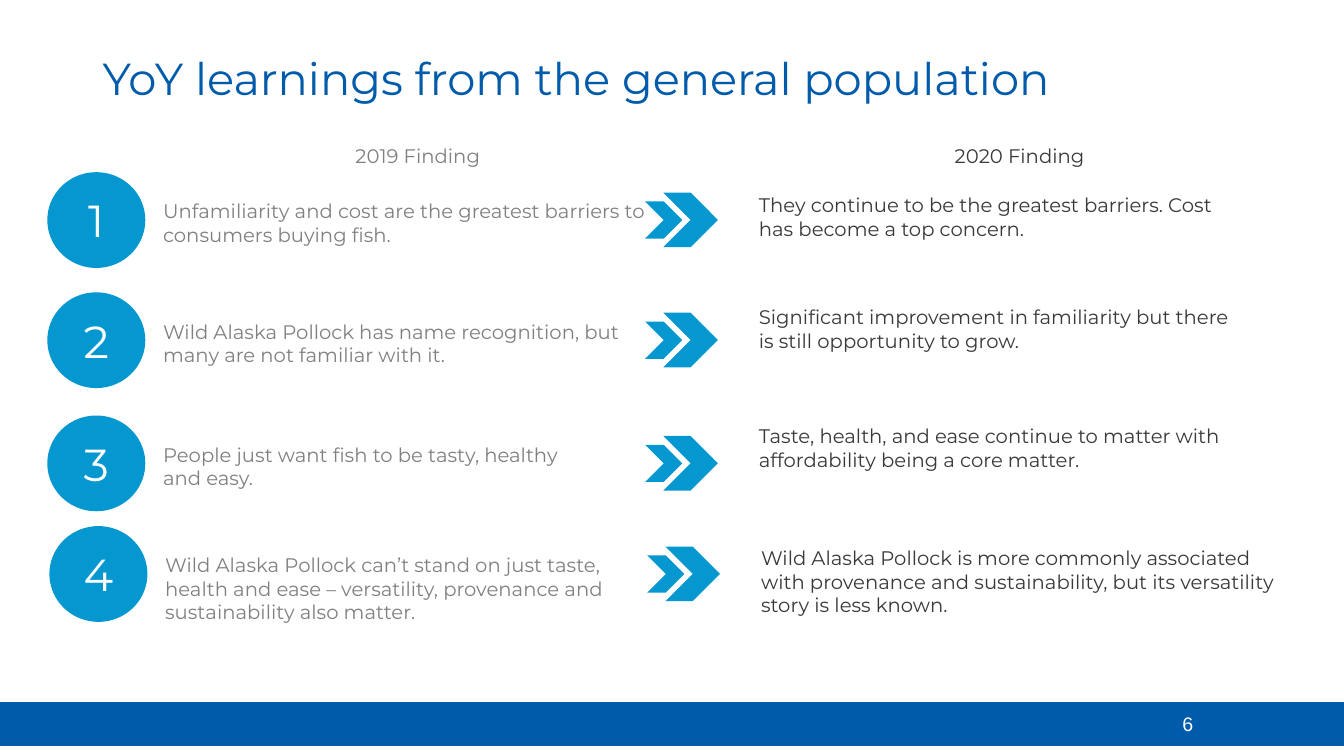
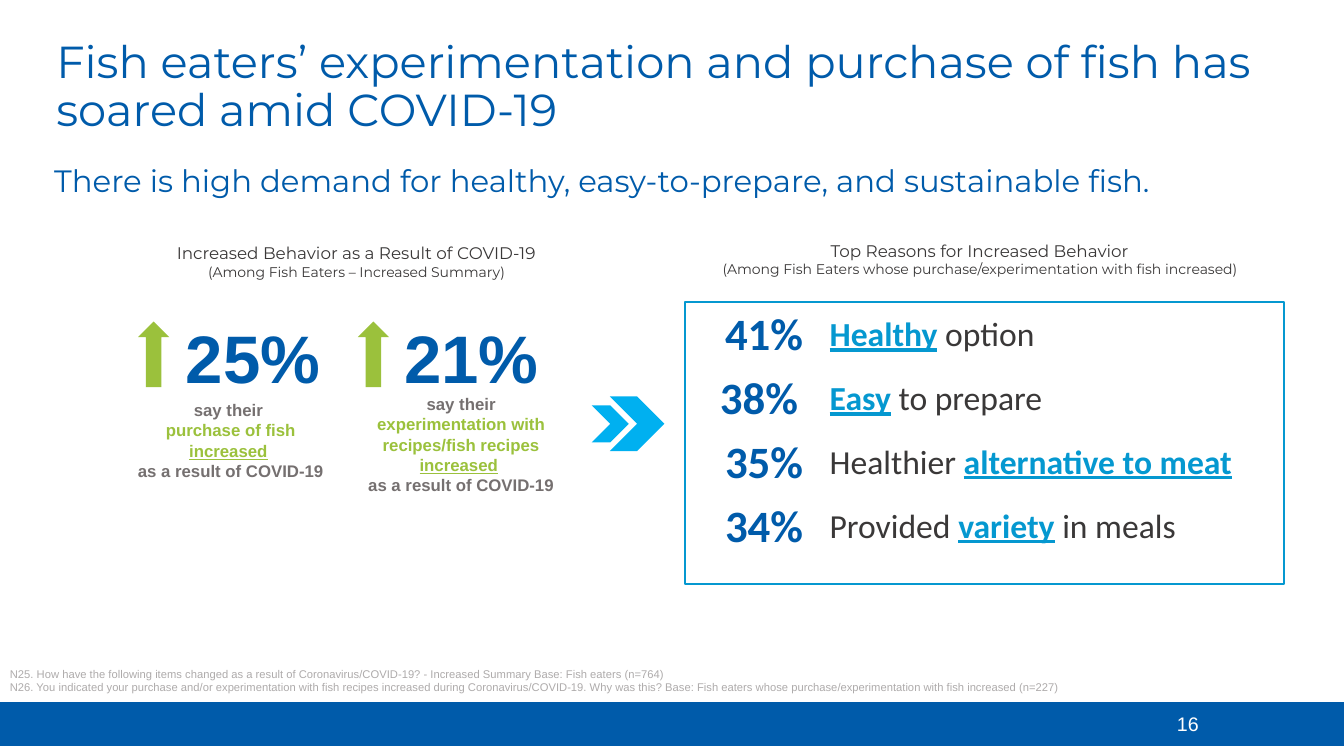
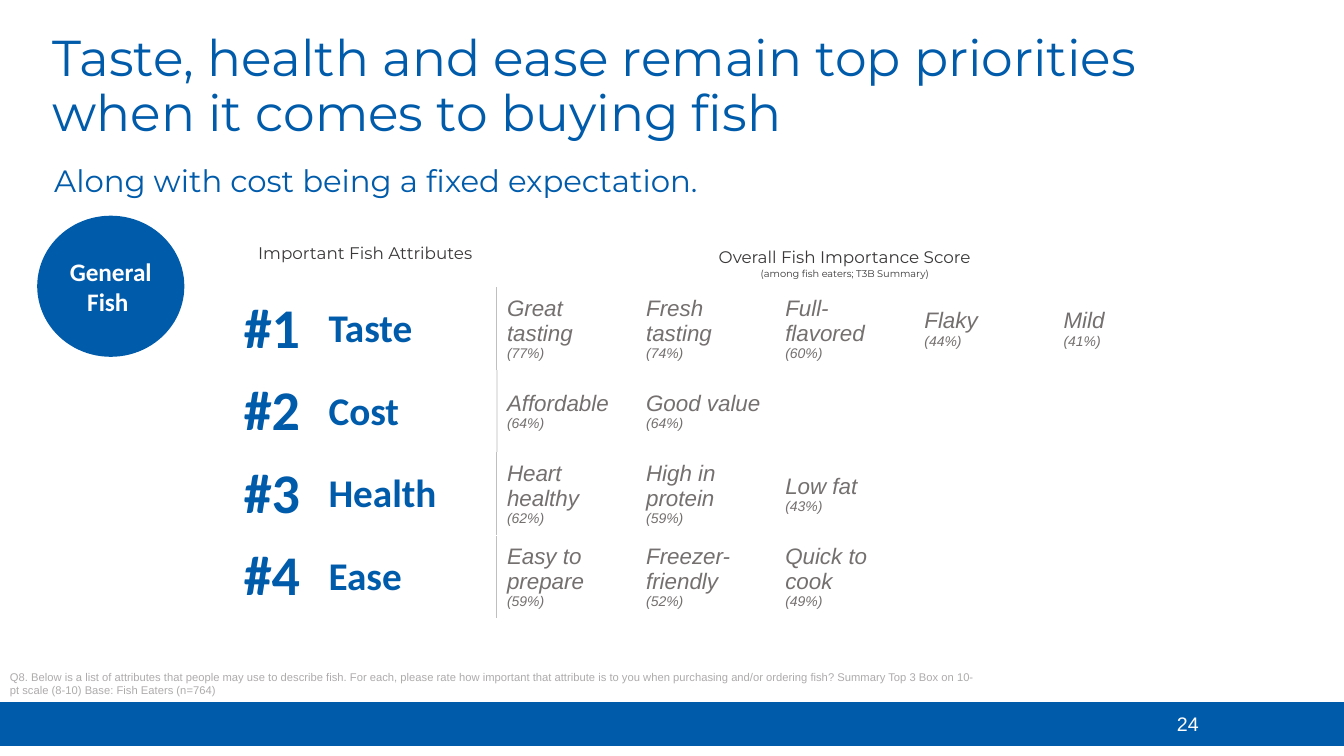
from lxml import etree
from pptx import Presentation
from pptx.dml.color import RGBColor
from pptx.enum.shapes import MSO_SHAPE as Kind
from pptx.enum.text import MSO_ANCHOR as Anchor, PP_ALIGN as Align
from pptx.oxml.ns import qn
from pptx.util import Pt

BLUE = RGBColor(0x00, 0x5B, 0xAA)
SKY = RGBColor(0x05, 0x98, 0xD0)
CYAN = RGBColor(0x00, 0xB0, 0xF0)
GREEN = RGBColor(0x9B, 0xC1, 0x3C)
WHITE = RGBColor(0xFF, 0xFF, 0xFF)
DARK = RGBColor(0x3A, 0x38, 0x38)
GRAY = RGBColor(0x80, 0x80, 0x80)
STONE = RGBColor(0x75, 0x70, 0x70)
PALE = RGBColor(0xAE, 0xAB, 0xAB)
RULE = RGBColor(0xBF, 0xBF, 0xBF)
FAINT = RGBColor(0xE7, 0xE6, 0xE6)

HEAD, BODY, BOLD = "Montserrat", "Arial", "Calibri"
KEY = dict(color=SKY, bold=True, line=True)
LEAF = dict(color=GREEN)
LEAFLINE = dict(color=GREEN, line=True)
SMALL = dict(size=10)

# top of the row, left shift, 2019 lines, top, width and text for 2020
FINDINGS = [
    (123, 0, ["Unfamiliarity and cost are the greatest barriers to consumers buying fish."],
     134.6, 363, "They continue to be the greatest barriers. Cost has become a top concern."),
    (208.8, 0, ["Wild Alaska Pollock has name recognition, but many are not familiar with it."],
     214.6, 363, "Significant improvement in familiarity but there is still opportunity to grow."),
    (296.8, 0, ["People just want fish to be tasty, healthy", "and easy."],
     299.5, 363, "Taste, health, and ease continue to matter with affordability being a core matter."),
    (375.8, 1.5, ["Wild Alaska Pollock can’t stand on just taste, health and ease – "
                  "versatility, provenance and sustainability also matter."],
     386.6, 386, "Wild Alaska Pollock is more commonly associated with provenance and "
                 "sustainability, but its versatility story is less known."),
]

# arrow left, figure box, caption box, figure, caption
RISES = [
    (98.6, (117.4, 222.5, 126.7, 65.5), (87.8, 282.2, 154.1, 65.5), "25%",
     ["say their ", [("purchase of fish ", LEAF), ("increased", LEAFLINE), (" ", LEAF)],
      "as a result of COVID-19"]),
    (255.6, (272.2, 222.5, 128.9, 65.5), (254.9, 277.9, 149, 80), "21%",
     [["say their ", ("experimentation with recipes/fish recipes ", LEAF),
       ("increased", LEAFLINE), (" ", LEAF)],
      "as a result of COVID-19"]),
]
REASONS = [
    ("41%", [("Healthy", KEY), " option"]),
    ("38% ", [("Easy", KEY), " to prepare"]),
    ("35%", ["Healthier ", ("alternative to meat", KEY)]),
    ("34%", ["Provided ", ("variety", KEY), " in meals"]),
]
CHARTED = [
    ((486, 168.5, 427.7, 33.8), "Top Reasons for Increased Behavior",
     "(Among Fish Eaters whose purchase/experimentation with fish increased)"),
    ((92.9, 169.9, 323.3, 34.6), "Increased Behavior as a Result of COVID-19",
     "(Among Fish Eaters – Increased Summary)"),
]
BASES = [
    "N25. How have the following items changed as a result of Coronavirus/COVID-19? "
    "- Increased Summary Base: Fish eaters (n=764)",
    "N26. You indicated your purchase and/or experimentation with fish recipes increased "
    "during Coronavirus/COVID-19. Why was this? Base: Fish eaters whose "
    "purchase/experimentation with fish increased (n=227)",
]

RANKS = [
    ("Taste", RULE, 0.75, [("Great tasting", 77), ("Fresh tasting", 74),
                           ("Full-flavored", 60), ("Flaky", 44), ("Mild", 41)]),
    ("Cost", FAINT, 1, [("Affordable", 64), ("Good value", 64)]),
    ("Health", RULE, 0.75, [("Heart healthy", 62), ("High in protein", 59), ("Low fat", 43)]),
    ("Ease", RULE, 0.75, [("Easy to prepare", 59), ("Freezer-friendly", 52),
                          ("Quick to cook", 49)]),
]
SCALE = ["Q8. Below is a list of attributes that people may use to describe fish. For each, "
         "please rate how important that attribute is to you when purchasing and/or ordering "
         "fish? Summary Top 3 Box on 10-pt scale (8-10) Base: Fish Eaters (n=764)"]


def write(frame, paras, align=Align.LEFT, space=None, **base):
    """Fill a frame; a paragraph is a string or a list of strings and (string, format) pairs."""
    for i, para in enumerate(paras):
        p = frame.paragraphs[0] if i == 0 else frame.add_paragraph()
        p.alignment = align
        if space:
            p.line_spacing = space
        for part in [para] if isinstance(para, (str, tuple)) else para:
            words, own = (part, {}) if isinstance(part, str) else part
            look = {**base, **own}
            run = p.add_run()
            run.text = words
            font = run.font
            font.name, font.size = look.get("font", BODY), Pt(look["size"])
            font.color.rgb = look["color"]
            font.bold = look.get("bold", False)
            font.italic = look.get("italic", False)
            font.underline = look.get("line", False)


def label(slide, box, paras, anchor=Anchor.TOP, **look):
    frame = slide.shapes.add_textbox(*map(Pt, box)).text_frame
    frame.word_wrap = True
    frame.vertical_anchor = anchor
    write(frame, paras, **look)


def draw(shapes, kind, box, fill=None, edge=None, width=1):
    shape = shapes.add_shape(kind, *map(Pt, box))
    shape.shadow.inherit = False
    if fill is None:
        shape.fill.background()
    else:
        shape.fill.solid()
        shape.fill.fore_color.rgb = fill
    if edge is None:
        shape.line.fill.background()
    else:
        shape.line.color.rgb = edge
        shape.line.width = Pt(width)
    return shape


def badge(slide, box, words, fill, **look):
    frame = draw(slide.shapes, Kind.OVAL, box, fill).text_frame
    frame.margin_left = frame.margin_right = 0
    frame.word_wrap = True
    frame.vertical_anchor = Anchor.MIDDLE
    write(frame, [words], align=Align.CENTER, color=WHITE, **look)


def chevrons(slide, left, top, fill):
    shapes = slide.shapes.add_group_shape().shapes
    draw(shapes, Kind.CHEVRON, (left + 13, top, 39, 39), fill)
    draw(shapes, Kind.CHEVRON, (left, top + 6.3, 26.6, 26.6), fill)


def grid(slide, left, top, cols, rows):
    """Add a table without banding, sized by its column widths and row heights."""
    frame = slide.shapes.add_table(len(rows), len(cols), Pt(left), Pt(top),
                                   Pt(sum(cols)), Pt(sum(rows)))
    table = frame.table
    table.first_row = table.horz_banding = False
    for col, width in zip(table.columns, cols):
        col.width = Pt(width)
    for row, height in zip(table.rows, rows):
        row.height = Pt(height)
    for cell in table.iter_cells():
        cell.fill.background()
        cell.margin_top = cell.margin_bottom = Pt(3)
        cell.vertical_anchor = Anchor.MIDDLE
    return table


def border(cell, side, color, width):
    edge = etree.Element(qn("a:ln" + side), w=str(Pt(width)))
    fill = etree.SubElement(edge, qn("a:solidFill"))
    etree.SubElement(fill, qn("a:srgbClr"), val=str(color))
    cell._tc.get_or_add_tcPr().insert(0, edge)


def start(deck, number, title, box, size=32, lead=None):
    """Add a slide with the footer band, page number, title and lead line."""
    slide = deck.slides.add_slide(deck.slide_layouts[6])
    draw(slide.shapes, Kind.RECTANGLE, (0, 501.8, 960, 30.3), BLUE, BLUE)
    label(slide, (810, 504.7, 77, 28.8), [number], align=Align.CENTER, size=14, color=WHITE)
    top = dict(anchor=Anchor.BOTTOM, space=0.9, font=HEAD, color=BLUE)
    label(slide, box, [title], size=size, **top)
    if lead:
        label(slide, (31.7, 114.5, 897, 31.7), [lead], size=22, **top)
    return slide


def notes(slide, top, width, lines):
    label(slide, (0, top, width, 26.6), lines, size=8, color=PALE)


def learnings(deck):
    slide = start(deck, "6", "YoY learnings from the general population",
                  (66.2, 7.2, 828, 71.3))
    old = dict(size=14, font=HEAD, color=GRAY)
    new = {**old, "color": DARK}
    for left, year, look in (103.7, "2019", old), (533.5, "2020", new):
        label(slide, (left, 99.4, 389.5, 24.5), [year + " Finding"], align=Align.CENTER, **look)
    for i, (top, shift, before, high, width, after) in enumerate(FINDINGS, 1):
        badge(slide, (33.8 + shift, top, 70, 68.4), str(i), SKY, size=32, font=HEAD)
        chevrons(slide, 460.8 + shift, top + 14.6, SKY)
        label(slide, (109.4 + shift, top + 15.9, 363, 41), before, **old)
        label(slide, (535 + shift, high, width, 41), [after], **new)


def demand(deck):
    slide = start(deck, "16", "Fish eaters’ experimentation and purchase of fish has "
                  "soared amid COVID-19", (33.1, 15.8, 894.2, 85),
                  lead="There is high demand for healthy, easy-to-prepare, and sustainable fish.")
    notes(slide, 473, 852.5, BASES)
    table = grid(slide, 506.2, 216.7, [79.2, 308.2], [45.6] * len(REASONS))
    for i, (share, reason) in enumerate(REASONS):
        write(table.cell(i, 0).text_frame, [share], align=Align.CENTER, size=32,
              font=BOLD, color=BLUE, bold=True)
        write(table.cell(i, 1).text_frame, [reason], size=24, font=BOLD, color=DARK)
    draw(slide.shapes, Kind.RECTANGLE, (489.6, 216, 427.7, 200.9), edge=SKY, width=1.5)
    chevrons(slide, 422.6, 283.2, CYAN)
    for box, head, group in CHARTED:
        label(slide, box, [head, (group, SMALL)], align=Align.CENTER,
              size=12, font=HEAD, color=DARK)
    for left, spot, under, share, words in RISES:
        draw(slide.shapes, Kind.UP_ARROW, (left, 229.7, 22.3, 46.8), GREEN)
        label(slide, spot, [share], align=Align.CENTER, size=48, color=BLUE, bold=True)
        label(slide, under, words, align=Align.CENTER, size=12, color=STONE, bold=True)


def priorities(deck):
    slide = start(deck, "24", "Taste, health and ease remain top priorities when it comes "
                  "to buying fish", (30.2, 0, 872, 105), size=36,
                  lead="Along with cost being a fixed expectation.")
    table = grid(slide, 167, 170.6, [60.5, 127.5] + [99.4] * 5, [35] + [59] * len(RANKS))
    heads = [(0, 1, ["Important Fish Attributes"]),
             (2, 6, ["Overall Fish Importance Score",
                     ("(among fish eaters; T3B Summary)", dict(size=7))])]
    for first, last, words in heads:
        cell = table.cell(0, first)
        cell.merge(table.cell(0, last))
        write(cell.text_frame, words, align=Align.CENTER, size=12, font=HEAD, color=DARK)
    table.cell(0, 0).vertical_anchor = Anchor.TOP
    for i, (name, color, width, scores) in enumerate(RANKS, 1):
        for j, (words, size) in enumerate([(f"#{i}", 40), (name, 28)]):
            write(table.cell(i, j).text_frame, [words], size=size, font=BOLD,
                  color=BLUE, bold=True)
        border(table.cell(i, 1), "R", color, width)
        border(table.cell(i, 2), "L", color, width)
        for j, (trait, score) in enumerate(scores, 2):
            write(table.cell(i, j).text_frame, [trait, (f"({score}%)", SMALL)],
                  size=16, color=STONE, italic=True)
    notes(slide, 475.2, 707.8, SCALE)
    badge(slide, (26.6, 154.1, 105.1, 100.8), "General Fish ", BLUE,
          size=18, font=BOLD, bold=True)


def main():
    deck = Presentation()
    deck.slide_width, deck.slide_height = Pt(960), Pt(540)
    for build in (learnings, demand, priorities):
        build(deck)
    deck.save("out.pptx")


if __name__ == "__main__":
    main()
